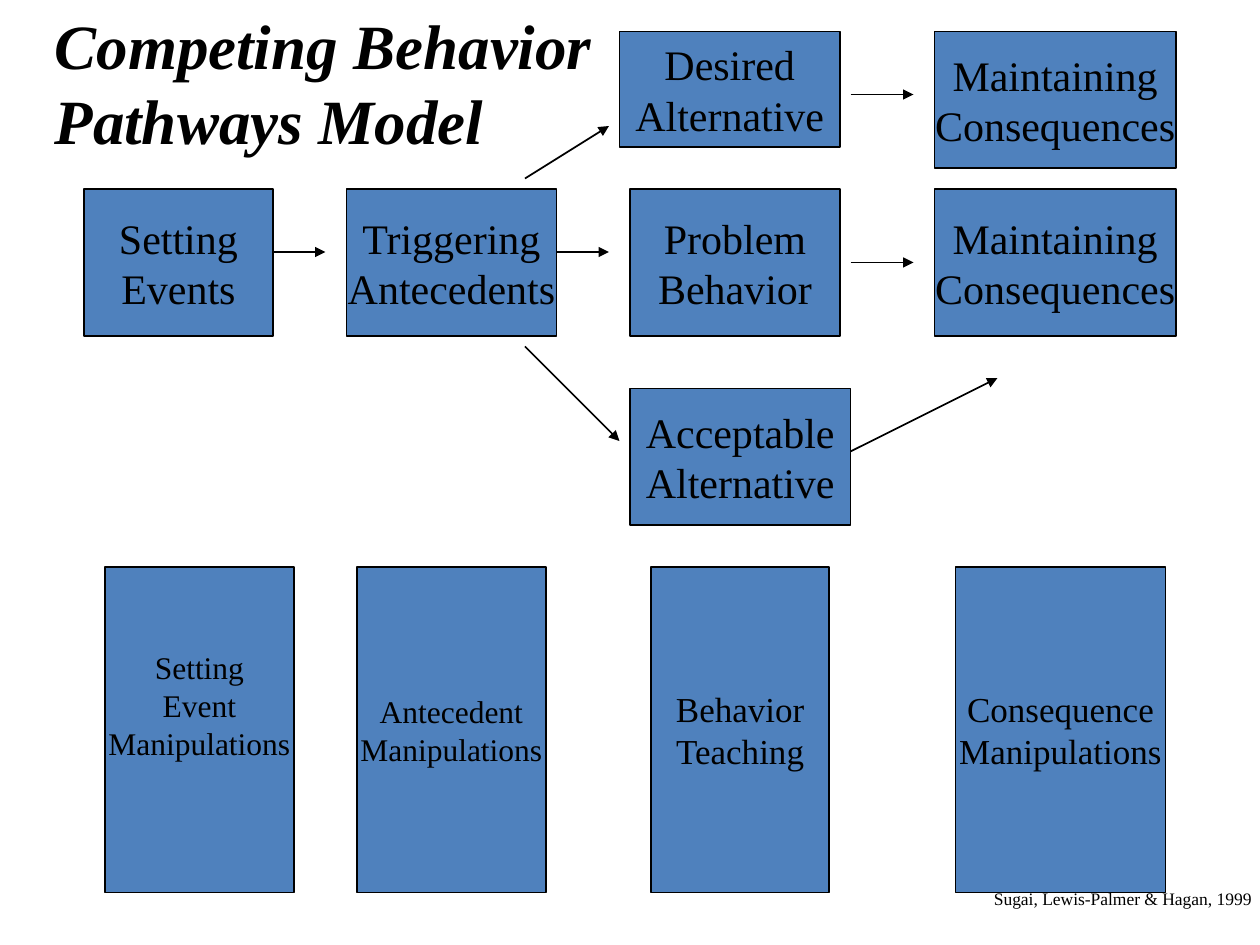
from lxml import etree
from pptx import Presentation
from pptx.dml.color import RGBColor
from pptx.enum.shapes import MSO_CONNECTOR, MSO_SHAPE
from pptx.enum.text import MSO_ANCHOR, MSO_AUTO_SIZE, PP_ALIGN
from pptx.oxml.ns import qn
from pptx.util import Pt

RECTANGLE = MSO_SHAPE.RECTANGLE
STRAIGHT = MSO_CONNECTOR.STRAIGHT
TOP, MIDDLE = MSO_ANCHOR.TOP, MSO_ANCHOR.MIDDLE
NO_AUTOFIT = MSO_AUTO_SIZE.NONE
LEFT, CENTER = PP_ALIGN.LEFT, PP_ALIGN.CENTER

FONT = "Times New Roman"
BLACK = "000000"
BLUE = "4F81BD"
TITLE_ONLY = 5
STRATEGY_TOP, STRATEGY_HEIGHT = 324, 186

PATHWAY_BOXES = [
    (48, 108, 108, 84, ["Setting", "Events"]),
    (198, 108, 120, 84, ["Triggering", "Antecedents"]),
    (354, 18, 126, 66, ["Desired", "Alternative"]),
    (360, 108, 120, 84, ["Problem", "Behavior"]),
    (360, 222, 126, 78, ["Acceptable", "Alternative"]),
    (534, 18, 138, 78, ["Maintaining", "Consequences"]),
    (534, 108, 138, 84, ["Maintaining", "Consequences"]),
]
STRATEGY_BOXES = [
    (60, 108, 18, 32, ["Setting", "Event", "Manipulations"]),
    (204, 108, 18, 3.6, ["Antecedent", "Manipulations"]),
    (372, 102, 20, 3.6, ["Behavior", "Teaching"]),
    (546, 120, 20, 3.6, ["Consequence", "Manipulations"]),
]
ARROWS = [
    (156, 144, 186, 144),
    (318, 144, 348, 144),
    (300, 102, 348, 72),
    (300, 198, 354, 252),
    (486, 54, 522, 54),
    (486, 150, 522, 150),
    (486, 258, 570, 216),
]


def color(value):
    return RGBColor.from_string(value)


def write_text(frame, lines, size, alignment, anchor, wrap=False):
    frame.auto_size = NO_AUTOFIT
    frame.word_wrap = wrap
    frame.vertical_anchor = anchor
    frame.text = "\n".join(lines)
    for paragraph in frame.paragraphs:
        paragraph.alignment = alignment
        paragraph.font.name = FONT
        paragraph.font.size = Pt(size)
        paragraph.font.color.rgb = color(BLACK)


def add_title(slide, text):
    title = slide.shapes.title
    title.left, title.top = Pt(24), Pt(0)
    title.width, title.height = Pt(330), Pt(94)
    write_text(title.text_frame, [text], 36, LEFT, TOP, wrap=True)
    font = title.text_frame.paragraphs[0].font
    font.bold = True
    font.italic = True


def add_box(slide, left, top, width, height, lines, size=24, bottom_margin=3.6):
    box = slide.shapes.add_shape(RECTANGLE, Pt(left), Pt(top), Pt(width), Pt(height))
    box.shadow.inherit = False
    box.fill.solid()
    box.fill.fore_color.rgb = color(BLUE)
    box.line.color.rgb = color(BLACK)
    box.line.width = Pt(1)
    box.text_frame.margin_bottom = Pt(bottom_margin)
    write_text(box.text_frame, lines, size, CENTER, MIDDLE)


def add_arrow(slide, *ends):
    arrow = slide.shapes.add_connector(STRAIGHT, *map(Pt, ends))
    arrow.line.color.rgb = color(BLACK)
    arrow.line.width = Pt(1)
    etree.SubElement(arrow.line._get_or_add_ln(), qn("a:tailEnd"), type="triangle")
    etree.SubElement(arrow._element.spPr, qn("a:effectLst"))


def add_citation(slide, text):
    citation = slide.shapes.add_textbox(Pt(560), Pt(504), Pt(163), Pt(19.4))
    write_text(citation.text_frame, [text], 10, CENTER, MIDDLE)


def main():
    presentation = Presentation()
    presentation.slide_width = Pt(720)
    presentation.slide_height = Pt(540)
    slide = presentation.slides.add_slide(presentation.slide_layouts[TITLE_ONLY])
    add_title(slide, "Competing Behavior Pathways Model")
    for box in PATHWAY_BOXES:
        add_box(slide, *box)
    for left, width, size, bottom_margin, lines in STRATEGY_BOXES:
        add_box(slide, left, STRATEGY_TOP, width, STRATEGY_HEIGHT, lines, size, bottom_margin)
    for ends in ARROWS:
        add_arrow(slide, *ends)
    add_citation(slide, "Sugai, Lewis-Palmer & Hagan, 1999")
    presentation.save("out.pptx")


if __name__ == "__main__":
    main()
